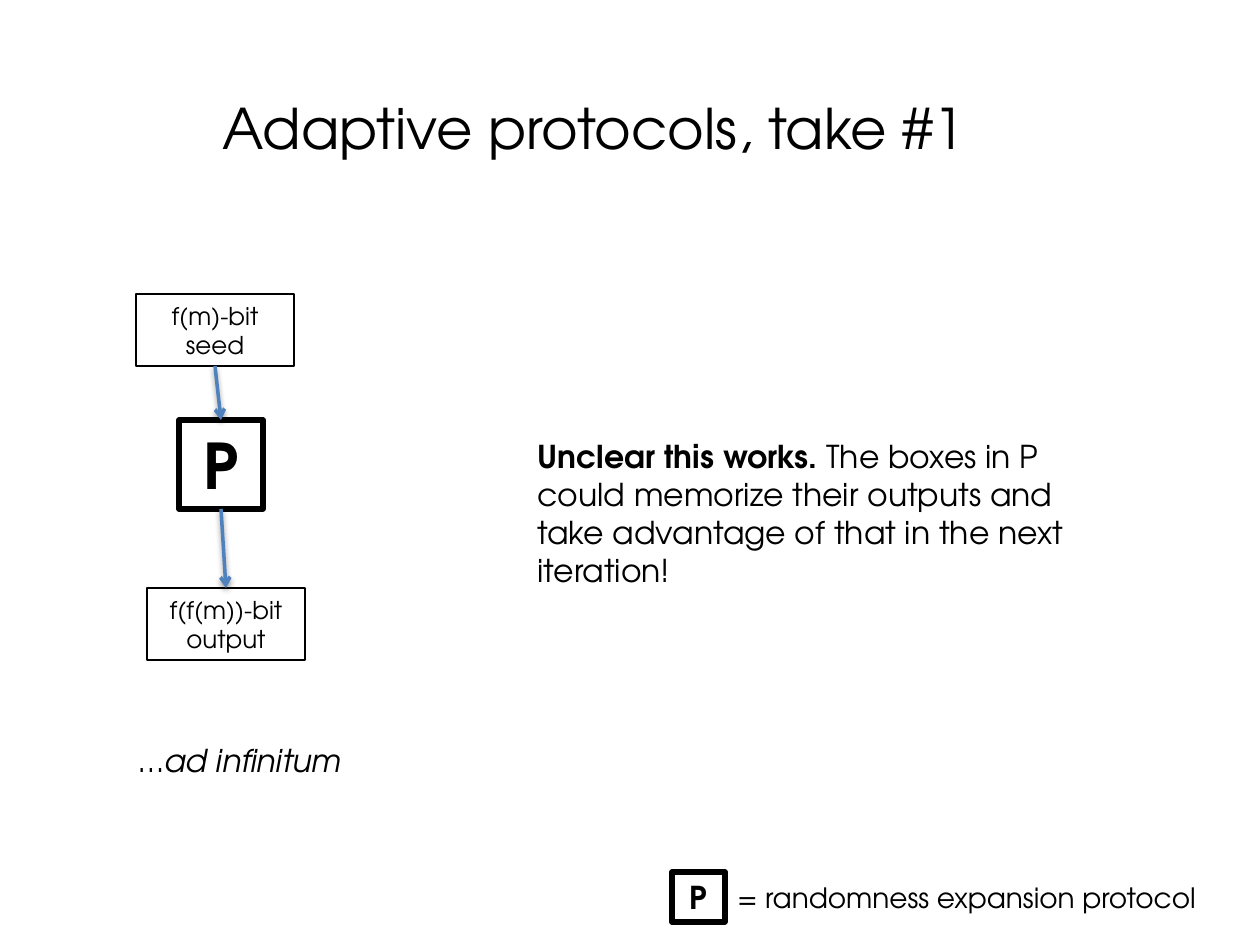
from dataclasses import dataclass

from lxml.etree import SubElement as Sub
from pptx import Presentation
from pptx.dml.color import RGBColor as Rgb
from pptx.enum.shapes import MSO_CONNECTOR as Link, MSO_SHAPE as Kind
from pptx.enum.text import MSO_ANCHOR as Anchor, MSO_AUTO_SIZE as Fit, PP_ALIGN as Align
from pptx.oxml.ns import qn
from pptx.util import Pt

SCALE = 914400 / 126  # EMU per px


@dataclass(frozen=True)
class Theme:
    font: str = "TeX Gyre Adventor"
    ink: str = "000000"
    blue: str = "4F81BD"
    title: int = 32
    mark: int = 36
    body: int = 18
    key: int = 16
    label: int = 14
    thin: float = 0.75
    thick: int = 3
    arrow: int = 2


THEME = Theme()


def px(*vals):
    return [round(v * SCALE) for v in vals]


def write(shape, *runs, size, align=Align.LEFT, anchor=Anchor.TOP):
    """Fill a shape with one paragraph of (text, bold, italic) runs."""
    frame = shape.text_frame
    frame.word_wrap = True
    frame.auto_size = Fit.NONE
    frame.vertical_anchor = anchor
    para = frame.paragraphs[0]
    para.alignment = align
    for text, bold, ital in runs:
        run = para.add_run()
        run.text = text
        font = run.font
        font.name, font.size = THEME.font, Pt(size)
        font.bold, font.italic = bold, ital
        font.color.rgb = Rgb.from_string(THEME.ink)


def add_box(slide, text, area, size, width, bold=False):
    box = slide.shapes.add_shape(Kind.RECTANGLE, *px(*area))
    box.shadow.inherit = False
    box.fill.background()
    box.line.color.rgb = Rgb.from_string(THEME.ink)
    box.line.width = Pt(width)
    write(box, (text, bold, False), size=size, align=Align.CENTER, anchor=Anchor.MIDDLE)
    return box


def add_note(slide, *runs, area, size):
    write(slide.shapes.add_textbox(*px(*area)), *runs, size=size)


def add_arrow(slide, start, end):
    """Join the bottom of one box to the top of the next."""
    line = slide.shapes.add_connector(Link.STRAIGHT, 0, 0, 0, 0)
    line.begin_connect(start, 2)
    line.end_connect(end, 0)
    line.line.color.rgb = Rgb.from_string(THEME.blue)
    line.line.width = Pt(THEME.arrow)
    props = line._element.spPr
    Sub(props.find(qn("a:ln")), qn("a:tailEnd"), type="arrow")
    # Soft shadow straight below
    glow = Sub(Sub(props, qn("a:effectLst")), qn("a:outerShdw"),
               blurRad="40000", dist="20000", dir="5400000", rotWithShape="0")
    tone = Sub(glow, qn("a:srgbClr"), val=THEME.ink)
    Sub(tone, qn("a:alpha"), val="38000")


def main():
    deck = Presentation()
    deck.slide_width, deck.slide_height = px(1260, 945)
    slide = deck.slides.add_slide(deck.slide_layouts[5])

    # Title
    title = slide.shapes.title
    title.left, title.top, title.width, title.height = px(210, 87, 850, 81)
    write(title, ("Adaptive protocols, take #1", False, False), size=THEME.title)

    # Chain from seed to output
    seed = add_box(slide, "f(m)-bit seed", (136, 294, 158, 72), THEME.label, THEME.thin)
    proto = add_box(slide, "P", (179, 420, 84, 89), THEME.mark, THEME.thick, bold=True)
    out = add_box(slide, "f(f(m))-bit output", (147, 588, 158, 72), THEME.label, THEME.thin)
    add_arrow(slide, seed, proto)
    add_arrow(slide, proto, out)
    add_note(slide, ("…", False, False), ("ad infinitum", False, True),
             area=(126, 735, 262, 50), size=THEME.body)

    # Remark
    add_note(slide, ("Unclear this works. ", True, False),
             ("The boxes in P could memorize their outputs and take advantage "
              "of that in the next iteration!", False, False),
             area=(525, 431, 609, 165), size=THEME.body)

    # Legend
    add_box(slide, "P", (672, 872, 53, 50), THEME.body, THEME.thick, bold=True)
    add_note(slide, ("= randomness expansion protocol", False, False),
             area=(725, 874, 504, 47), size=THEME.key)

    deck.save("out.pptx")


if __name__ == "__main__":
    main()
